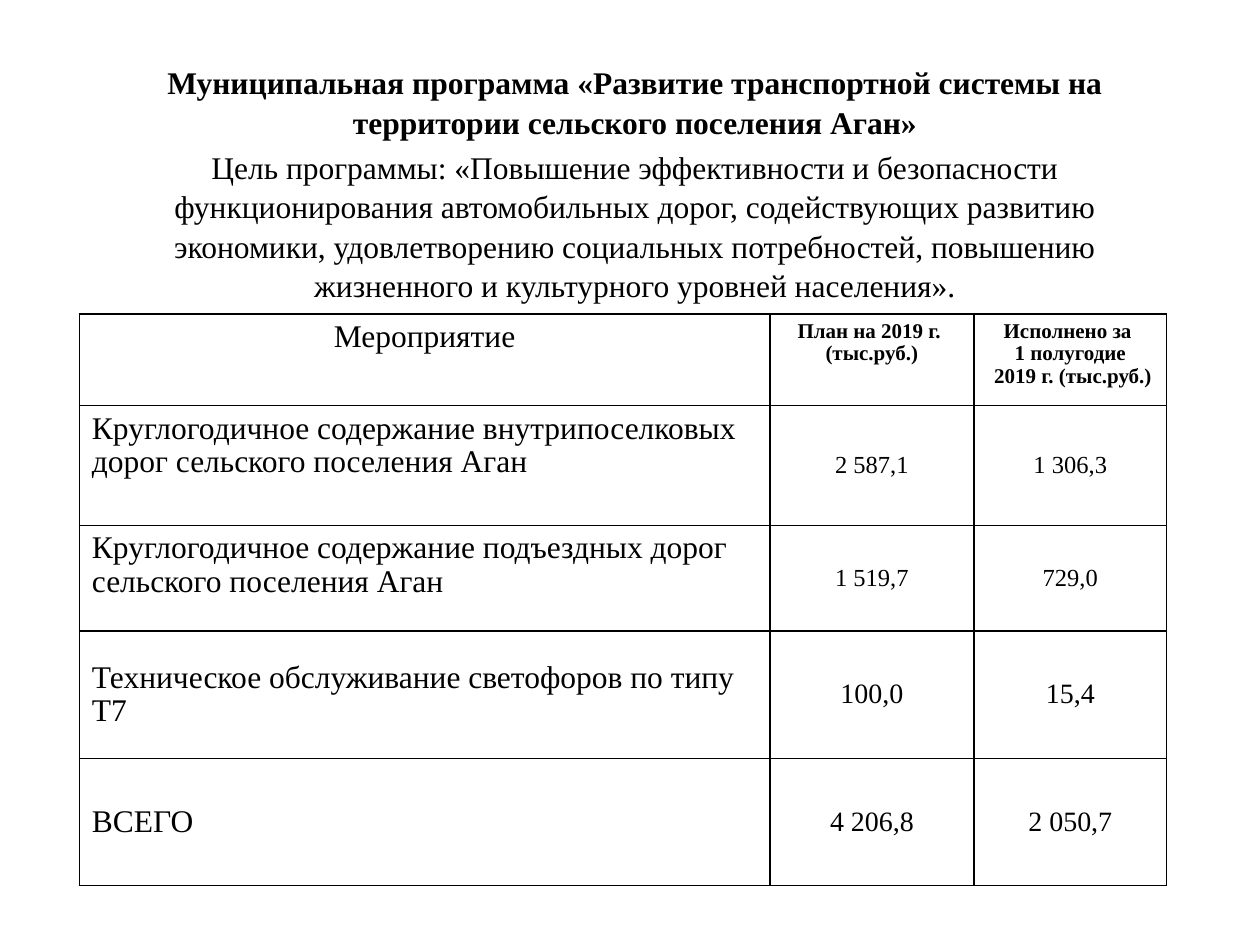
"""Build the slide on the transport programme of the Agan rural settlement."""
from lxml.etree import SubElement
from pptx import Presentation
from pptx.dml.color import RGBColor
from pptx.enum.text import MSO_ANCHOR as Anchor, MSO_AUTO_SIZE as AutoSize, PP_ALIGN as Align
from pptx.oxml.ns import qn
from pptx.util import Inches, Pt


def write(frame, text, size=18, bold=False, align=Align.CENTER, before=0, spacing=0.97, add=False):
    for number, line in enumerate(text.split("\n")):
        para = frame.add_paragraph() if add or number else frame.paragraphs[0]
        para.alignment = align
        para.space_before = Pt(before)
        para.line_spacing = spacing
        span = para.add_run()
        span.text = line
        span.font.name = "Times New Roman"
        span.font.size = Pt(size)
        span.font.bold = bold
        span.font.color.rgb = RGBColor.from_string("000000")


def outline(cell, color="000000", width=1):
    properties = cell._tc.get_or_add_tcPr()
    for side in ("a:lnL", "a:lnR", "a:lnT", "a:lnB"):
        line = SubElement(properties, qn(side), w=str(Pt(width)))
        fill = SubElement(line, qn("a:solidFill"))
        SubElement(fill, qn("a:srgbClr"), val=color)


deck = Presentation()
deck.slide_width, deck.slide_height = Inches(10), Inches(7.5)
page = deck.slides.add_slide(deck.slide_layouts[0])
title = page.shapes.title.element
title.getparent().remove(title)

intro = page.placeholders[1]
intro.left, intro.top = Inches(0.75), Inches(0.44)
intro.width, intro.height = Inches(8.58), Inches(6.69)
frame = intro.text_frame
frame.word_wrap = True
frame.auto_size = AutoSize.NONE
frame.vertical_anchor = Anchor.TOP
write(frame, "Муниципальная программа «Развитие транспортной системы на территории сельского поселения Аган»",
      bold=True, before=3.6, spacing=1.04)
write(frame, "Цель программы: «Повышение эффективности и безопасности функционирования автомобильных дорог, "
      "содействующих развитию экономики, удовлетворению социальных потребностей, повышению жизненного "
      "и культурного уровней населения».", before=3.6, spacing=1.04, add=True)

rows = [
    ("Мероприятие", "План на 2019 г. \n(тыс.руб.)", "Исполнено за \n1 полугодие\n 2019 г. (тыс.руб.)"),
    ("Круглогодичное содержание внутрипоселковых дорог сельского поселения Аган", "2 587,1", "1 306,3"),
    ("Круглогодичное содержание подъездных дорог сельского поселения Аган", "1 519,7", "729,0"),
    ("Техническое обслуживание светофоров по типу Т7", "100,0", "15,4"),
    ("ВСЕГО", "4 206,8", "2 050,7"),
]
widths = [5.48, 1.62, 1.53]
heights = [0.73, 0.95, 0.84, 1.01, 1.01]
value_sizes = [12, 14, 14, 16, 16]

table = page.shapes.add_table(len(rows), len(widths), Inches(0.63), Inches(2.49),
                              Inches(sum(widths)), Inches(sum(heights))).table
table.first_row = table.horz_banding = False
for column, width in zip(table.columns, widths):
    column.width = Inches(width)
for r, texts in enumerate(rows):
    table.rows[r].height = Inches(heights[r])
    for c, text in enumerate(texts):
        cell = table.cell(r, c)
        outline(cell)
        cell.fill.background()
        middle = r > 2 or (r > 0 and c > 0)
        cell.vertical_anchor = Anchor.MIDDLE if middle else Anchor.TOP
        write(cell.text_frame, text, size=value_sizes[r] if c else 18, bold=r == 0 and c > 0,
              align=Align.LEFT if r and c == 0 else Align.CENTER)

deck.save("out.pptx")
